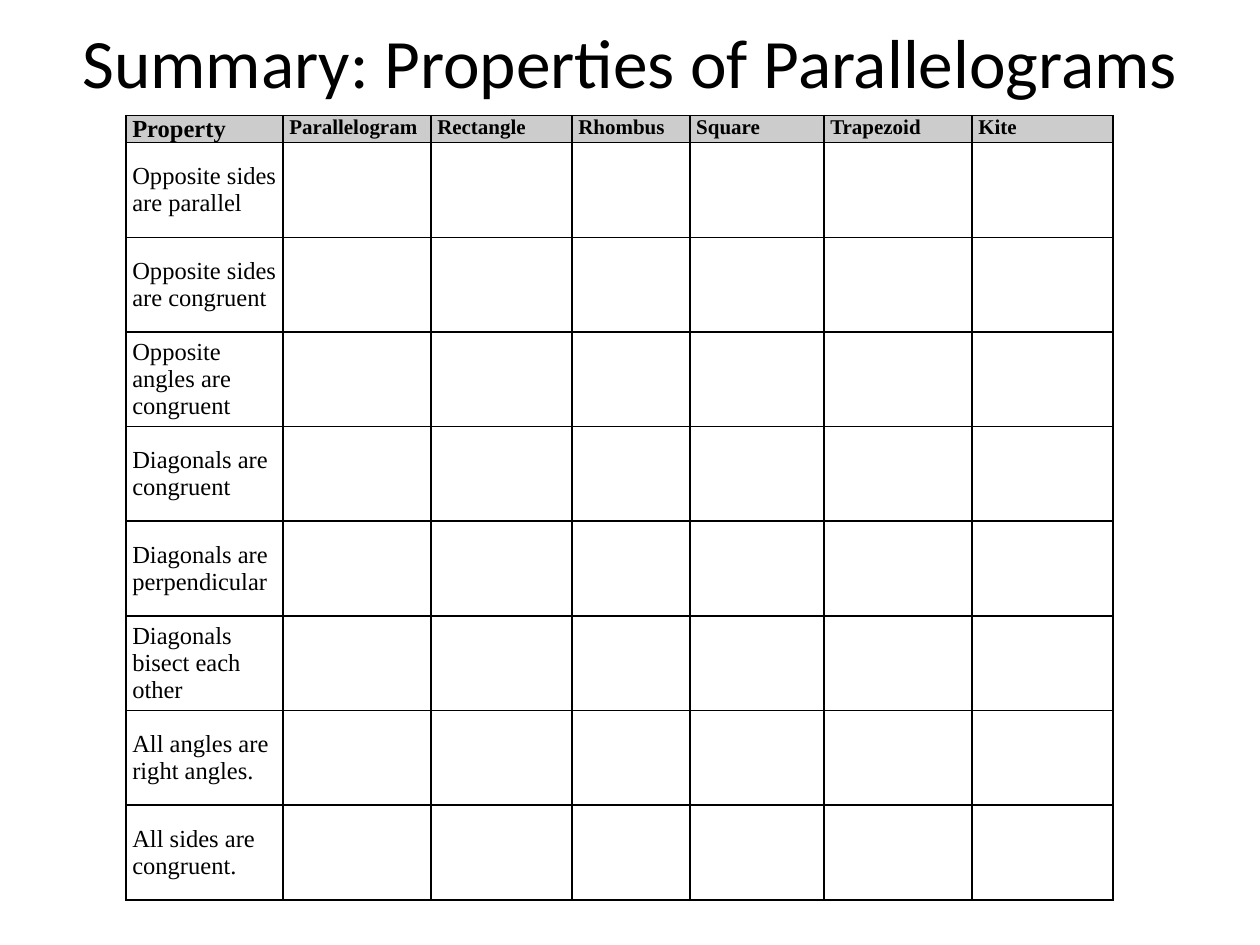
from dataclasses import dataclass

from lxml.etree import SubElement
from pptx import Presentation
from pptx.dml.color import RGBColor
from pptx.enum.text import MSO_ANCHOR, MSO_AUTO_SIZE, PP_ALIGN
from pptx.oxml.ns import qn
from pptx.slide import Slide
from pptx.table import _Cell
from pptx.text.text import TextFrame
from pptx.util import Pt

COLORS = {"ink": "000000", "header": "CCCCCC"}
HEADER_HEIGHT = 15.3
PROPERTY_HEIGHT = 54.1


@dataclass(frozen=True)
class Column:
    heading: str
    width: float
    size: float = 12


@dataclass(frozen=True)
class TextStyle:
    font: str
    size: float
    bold: bool = False


COLUMNS = [
    Column("Property", 89.7, 14),
    Column("Parallelogram", 84.6),
    Column("Rectangle", 80.6),
    Column("Rhombus", 67.4),
    Column("Square", 76.6),
    Column("Trapezoid", 84.6),
    Column("Kite", 80.6),
]
PROPERTIES = [
    "Opposite sides are parallel",
    "Opposite sides are congruent",
    "Opposite angles are congruent",
    "Diagonals are congruent",
    "Diagonals are perpendicular",
    "Diagonals bisect each other",
    "All angles are right angles.",
    "All sides are congruent.",
]


def write(frame: TextFrame, text: str, style: TextStyle) -> None:
    run = frame.paragraphs[0].add_run()
    run.text = text
    run.font.name = style.font
    run.font.size = Pt(style.size)
    run.font.bold = style.bold
    run.font.color.rgb = RGBColor.from_string(COLORS["ink"])


def add_borders(cell: _Cell) -> None:
    properties = cell._tc.get_or_add_tcPr()
    for side in ("a:lnL", "a:lnR", "a:lnT", "a:lnB"):
        line = SubElement(properties, qn(side), w=str(Pt(1)))
        fill = SubElement(line, qn("a:solidFill"))
        SubElement(fill, qn("a:srgbClr"), val=COLORS["ink"])


def format_cell(cell: _Cell, is_header: bool) -> None:
    add_borders(cell)
    cell.margin_left = cell.margin_right = Pt(3.6)
    cell.margin_top = cell.margin_bottom = Pt(0)
    if is_header:
        cell.fill.solid()
        cell.fill.fore_color.rgb = RGBColor.from_string(COLORS["header"])
    else:
        cell.fill.background()
        cell.vertical_anchor = MSO_ANCHOR.MIDDLE


def add_title(slide: Slide, text: str) -> None:
    title = slide.shapes.title
    title.left, title.top, title.width, title.height = Pt(36), Pt(0), Pt(648), Pt(70)
    frame = title.text_frame
    frame.auto_size = MSO_AUTO_SIZE.NONE
    frame.vertical_anchor = MSO_ANCHOR.MIDDLE
    frame.paragraphs[0].alignment = PP_ALIGN.CENTER
    write(frame, text, TextStyle("Calibri", 39.6))


def add_property_table(slide: Slide) -> None:
    width = sum(column.width for column in COLUMNS)
    height = HEADER_HEIGHT + PROPERTY_HEIGHT * len(PROPERTIES)
    table = slide.shapes.add_table(
        len(PROPERTIES) + 1, len(COLUMNS), Pt(72), Pt(66), Pt(width), Pt(height)
    ).table
    table.first_row = table.horz_banding = False

    for row_index, row in enumerate(table.rows):
        row.height = Pt(PROPERTY_HEIGHT if row_index else HEADER_HEIGHT)
        for cell in row.cells:
            format_cell(cell, is_header=row_index == 0)

    for index, column in enumerate(COLUMNS):
        table.columns[index].width = Pt(column.width)
        heading_style = TextStyle("Times New Roman", column.size, bold=True)
        write(table.cell(0, index).text_frame, column.heading, heading_style)

    for row_index, statement in enumerate(PROPERTIES, start=1):
        statement_style = TextStyle("Times New Roman", 14)
        write(table.cell(row_index, 0).text_frame, statement, statement_style)


def main() -> None:
    presentation = Presentation()
    presentation.slide_width, presentation.slide_height = Pt(720), Pt(540)
    slide = presentation.slides.add_slide(presentation.slide_layouts[5])
    add_title(slide, "Summary: Properties of Parallelograms")
    add_property_table(slide)
    presentation.save("out.pptx")


if __name__ == "__main__":
    main()
